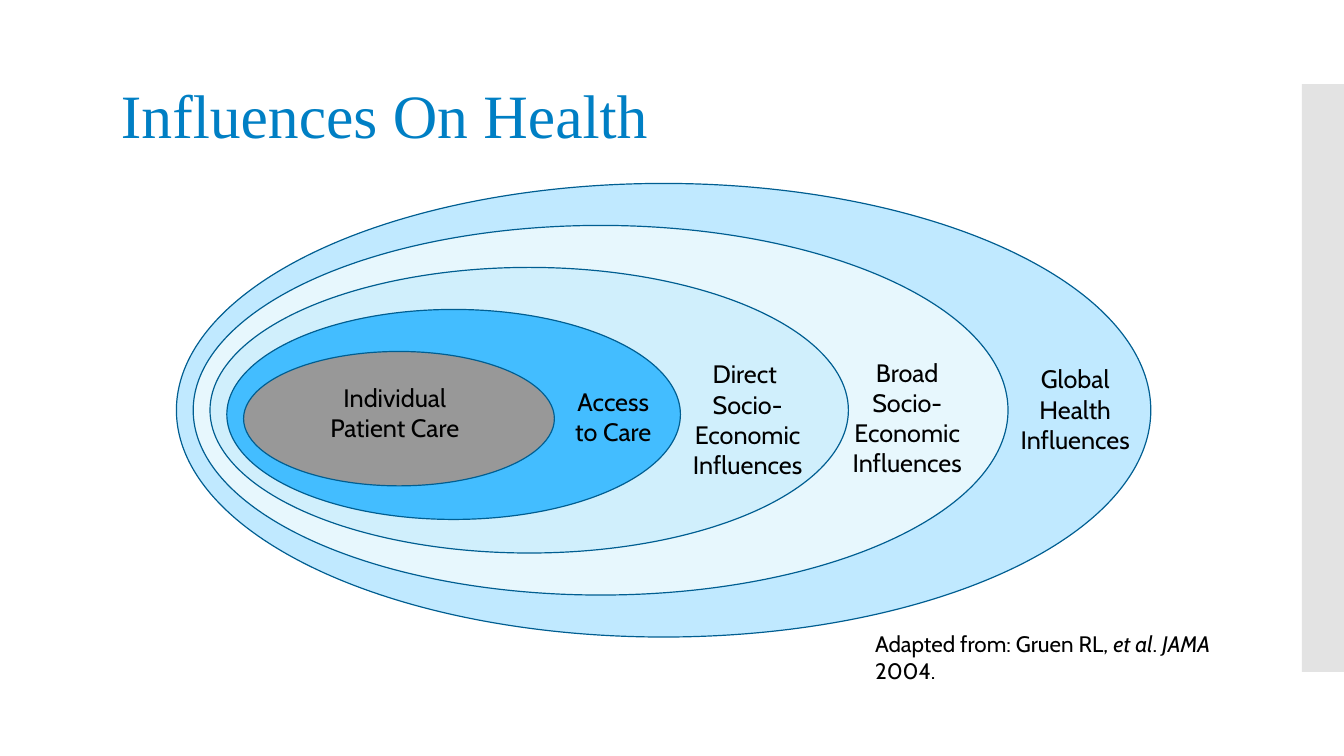
import pptx
import pptx.dml.color
import pptx.enum.shapes
import pptx.enum.text
import pptx.oxml.ns
import pptx.util
from lxml import etree

COLS, ROWS = 160, 90  # grid cells of 1/12 inch
SLIDE_W, SLIDE_H = pptx.util.Inches(13.33), pptx.util.Inches(7.5)

# fill, width, height of each ellipse, from the outermost inwards
RINGS = [
    ("C0E9FF", 116, 54),
    ("E7F7FD", 97, 44),
    ("D0EFFC", 76, 34),
    ("43BDFF", 54, 25),
    ("989898", 37, 16),
]
RING_LEFT, RING_TOP = 21, 21.84
STEP_X, STEP_Y = 2, 5

# text, left, top, width, height
LABELS = [
    ("Access to Care", 66, 45.4, 14, 8.5),
    ("Individual Patient Care", 35, 44.9, 24, 8.5),
    ("Direct \vSocio-Economic Influences", 80, 42.1, 18, 15.7),
    ("Broad Socio-Economic Influences", 99, 41.9, 18, 15.7),
    ("Global Health Influences", 119, 42.7, 18, 12.1),
]

CITATION = [
    ("Adapted from: Gruen RL, ", False),
    ("et al", True),
    (". ", False),
    ("JAMA", True),
    (" 2004.", False),
]


def rgb(value):
    return pptx.dml.color.RGBColor.from_string(value)


def cells(left, top, width, height):
    """Turn grid columns and rows into slide lengths."""
    return (int(SLIDE_W * left / COLS), int(SLIDE_H * top / ROWS),
            int(SLIDE_W * width / COLS), int(SLIDE_H * height / ROWS))


class SlideBuilder:
    font = "Cabin"
    title_font = "Times New Roman"
    ink, accent, outline = "000000", "007FC4", "005E91"

    def __init__(self, slide):
        self.slide = slide

    def style(self, r, size, color, name, italic=False):
        r.font.size = pptx.util.Pt(size)
        r.font.name = name
        r.font.color.rgb = rgb(color)
        r.font.italic = italic

    def title(self, text, *box):
        sp = self.slide.shapes.title
        sp.left, sp.top, sp.width, sp.height = cells(*box)
        tf = sp.text_frame
        tf.text = text
        tf.vertical_anchor = pptx.enum.text.MSO_ANCHOR.TOP
        p = tf.paragraphs[0]
        p.alignment = pptx.enum.text.PP_ALIGN.LEFT
        p.line_spacing = 0.9
        self.style(p.runs[0], 44, self.accent, self.title_font)

    def shape(self, kind, fill, *box):
        sp = self.slide.shapes.add_shape(kind, *cells(*box))
        sp.shadow.inherit = False
        sp.fill.solid()
        sp.fill.fore_color.rgb = rgb(fill)
        return sp

    def side_bar(self, fill, opacity, *box):
        sp = self.shape(pptx.enum.shapes.MSO_SHAPE.RECTANGLE, fill, *box)
        sp.line.fill.background()
        color = sp.fill._xPr.find(".//" + pptx.oxml.ns.qn("a:srgbClr"))
        alpha = etree.SubElement(color, pptx.oxml.ns.qn("a:alpha"))
        alpha.set("val", str(opacity * 1000))

    def ellipse(self, fill, *box):
        sp = self.shape(pptx.enum.shapes.MSO_SHAPE.OVAL, fill, *box)
        sp.line.color.rgb = rgb(self.outline)
        sp.line.width = pptx.util.Pt(0.85)

    def text_box(self, *box):
        tf = self.slide.shapes.add_textbox(*cells(*box)).text_frame
        tf.word_wrap = True
        return tf

    def label(self, text, *box):
        tf = self.text_box(*box)
        tf.text = text
        p = tf.paragraphs[0]
        p.alignment = pptx.enum.text.PP_ALIGN.CENTER
        for r in p.runs:
            self.style(r, 18, self.ink, self.font)

    def citation(self, parts, *box):
        p = self.text_box(*box).paragraphs[0]
        for text, italic in parts:
            r = p.add_run()
            r.text = text
            self.style(r, 16, self.ink, self.font, italic)


def main():
    prs = pptx.Presentation()
    prs.slide_width, prs.slide_height = SLIDE_W, SLIDE_H
    title_only = prs.slide_layouts[5]
    builder = SlideBuilder(prs.slides.add_slide(title_only))

    builder.title("Influences On Health", 13.2, 9.6, 88.4, 12.1)
    builder.side_bar("C8C8C8", 50, 155, 10, 5, 70)
    for i, (fill, width, height) in enumerate(RINGS):
        builder.ellipse(fill, RING_LEFT + i * STEP_X, RING_TOP + i * STEP_Y,
                        width, height)
    for label in LABELS:
        builder.label(*label)
    builder.citation(CITATION, 103, 74.4, 46.5, 7.5)

    prs.save("out.pptx")


if __name__ == "__main__":
    main()
